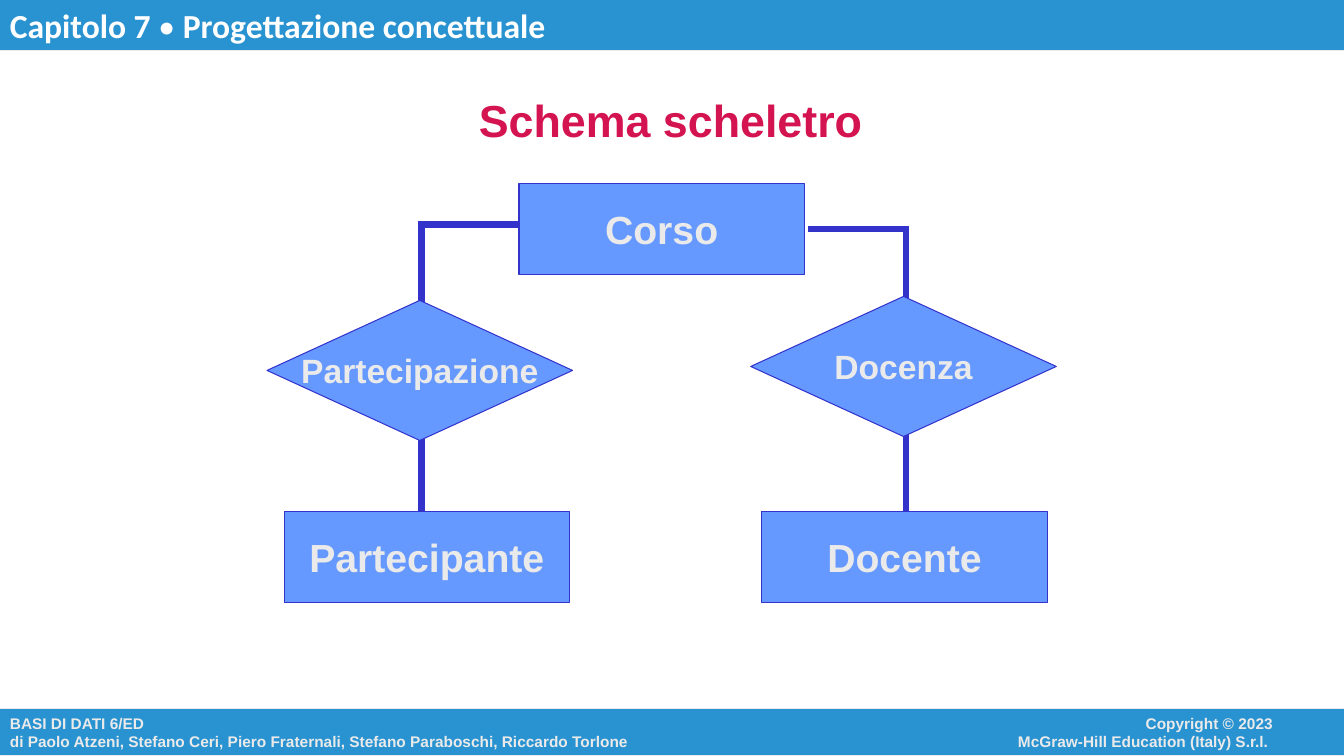
from pptx import Presentation
from pptx.dml.color import RGBColor
from pptx.enum.shapes import MSO_CONNECTOR, MSO_SHAPE
from pptx.enum.text import MSO_ANCHOR, PP_ALIGN
from pptx.oxml.ns import qn
from pptx.util import Cm, Pt
from lxml.etree import SubElement

COLORS = {
    "band": "2993D1",
    "light": "EAEAEA",
    "white": "FFFFFF",
    "box": "6699FF",
    "line": "3333CC",
    "title": "D41450",
}
ENTITY_SIZE = (7.19, 2.31)
RELATIONSHIP_SIZE = (7.7, 3.53)


def color(name):
    """Return the named colour."""
    return RGBColor.from_string(COLORS[name])


def set_font(paragraph, size, color_name, name="Arial"):
    """Give a paragraph its bold font."""
    font = paragraph.font
    font.name, font.size, font.bold = name, Pt(size), True
    font.color.rgb = color(color_name)


def write(shape, text, size, color_name, align, anchor=MSO_ANCHOR.MIDDLE, wrap=True):
    """Fill a shape with text in one style."""
    frame = shape.text_frame
    frame.text = text
    frame.word_wrap = wrap
    frame.vertical_anchor = anchor
    for paragraph in frame.paragraphs:
        paragraph.alignment = align
        set_font(paragraph, size, color_name)


def add_filled(slide, kind, place, fill, line, width):
    """Add a flat preset shape with fill and outline."""
    shape = slide.shapes.add_shape(kind, *map(Cm, place))
    shape.shadow.inherit = False
    shape.fill.solid()
    shape.fill.fore_color.rgb = color(fill)
    shape.line.color.rgb = color(line)
    shape.line.width = Pt(width)
    return shape


def add_node(slide, kind, left, top, dimensions, label, size):
    """Add a labelled entity or relationship."""
    node = add_filled(slide, kind, (left, top, *dimensions), "box", "line", 0.75)
    write(node, label, size, "light", PP_ALIGN.CENTER, wrap=False)


def add_entity(slide, left, top, label):
    """Add an entity rectangle."""
    add_node(slide, MSO_SHAPE.RECTANGLE, left, top, ENTITY_SIZE, label, 28)


def add_link(slide, *ends):
    """Add a thick straight line."""
    link = slide.shapes.add_connector(MSO_CONNECTOR.STRAIGHT, *map(Cm, ends))
    link.line.color.rgb = color("line")
    link.line.width = Pt(4.5)
    SubElement(link._element.spPr, qn("a:effectLst"))


def add_relationship(slide, label, left, top, stem, start, end):
    """Add a relationship diamond over its two lines."""
    line_top = top - 1.91 if start > end else top - 1.7
    add_link(slide, stem, line_top, stem, line_top + 7.42)
    add_link(slide, start, line_top, end, line_top)
    add_node(slide, MSO_SHAPE.DIAMOND, left, top, RELATIONSHIP_SIZE, label, 24)


def add_text(slide, place, text, size, color_name, align, anchor):
    """Add a text box."""
    box = slide.shapes.add_textbox(*map(Cm, place))
    write(box, text, size, color_name, align, anchor)


def add_header(slide):
    """Add the chapter band."""
    band = add_filled(slide, MSO_SHAPE.RECTANGLE, (0, 0, 33.88, 1.27), "band", "light", 0)
    band.text_frame.vertical_anchor = MSO_ANCHOR.TOP
    paragraph = band.text_frame.paragraphs[0]
    paragraph.alignment = PP_ALIGN.LEFT
    set_font(paragraph, 24, "white", "Calibri")
    for text, bold in (("Capitolo 7 ", True), ("•", False), (" Progettazione concettuale", True)):
        run = paragraph.add_run()
        run.text = text
        run.font.bold = bold


def add_footer(slide):
    """Add the band with the book and its copyright."""
    band = add_filled(slide, MSO_SHAPE.RECTANGLE, (0, 17.86, 33.91, 1.19), "band", "light", 0.75)
    write(band, "BASI DI DATI 6/ED\vdi Paolo Atzeni, Stefano Ceri, Piero Fraternali, "
          "Stefano Paraboschi, Riccardo Torlone", 11, "light", PP_ALIGN.LEFT)
    add_text(slide, (22.58, 17.86, 9.75, 1.17),
             "Copyright © 2023\nMcGraw-Hill Education (Italy) S.r.l. ",
             11, "light", PP_ALIGN.RIGHT, MSO_ANCHOR.TOP)


def main():
    """Build the slide and save it."""
    presentation = Presentation()
    presentation.slide_width, presentation.slide_height = Cm(33.87), Cm(19.05)
    slide = presentation.slides.add_slide(presentation.slide_layouts[6])
    add_footer(slide)
    add_header(slide)
    add_entity(slide, 13.08, 4.62, "Corso")
    add_relationship(slide, "Partecipazione", 6.73, 7.57, 10.62, 13.08, 10.54)
    add_relationship(slide, "Docenza", 18.92, 7.47, 22.83, 20.37, 22.91)
    add_entity(slide, 7.16, 12.88, "Partecipante")
    add_entity(slide, 19.2, 12.88, "Docente")
    add_text(slide, (3.94, 2.51, 25.93, 0.99), "Schema scheletro", 32, "title",
             PP_ALIGN.CENTER, MSO_ANCHOR.MIDDLE)
    presentation.save("out.pptx")


if __name__ == "__main__":
    main()
